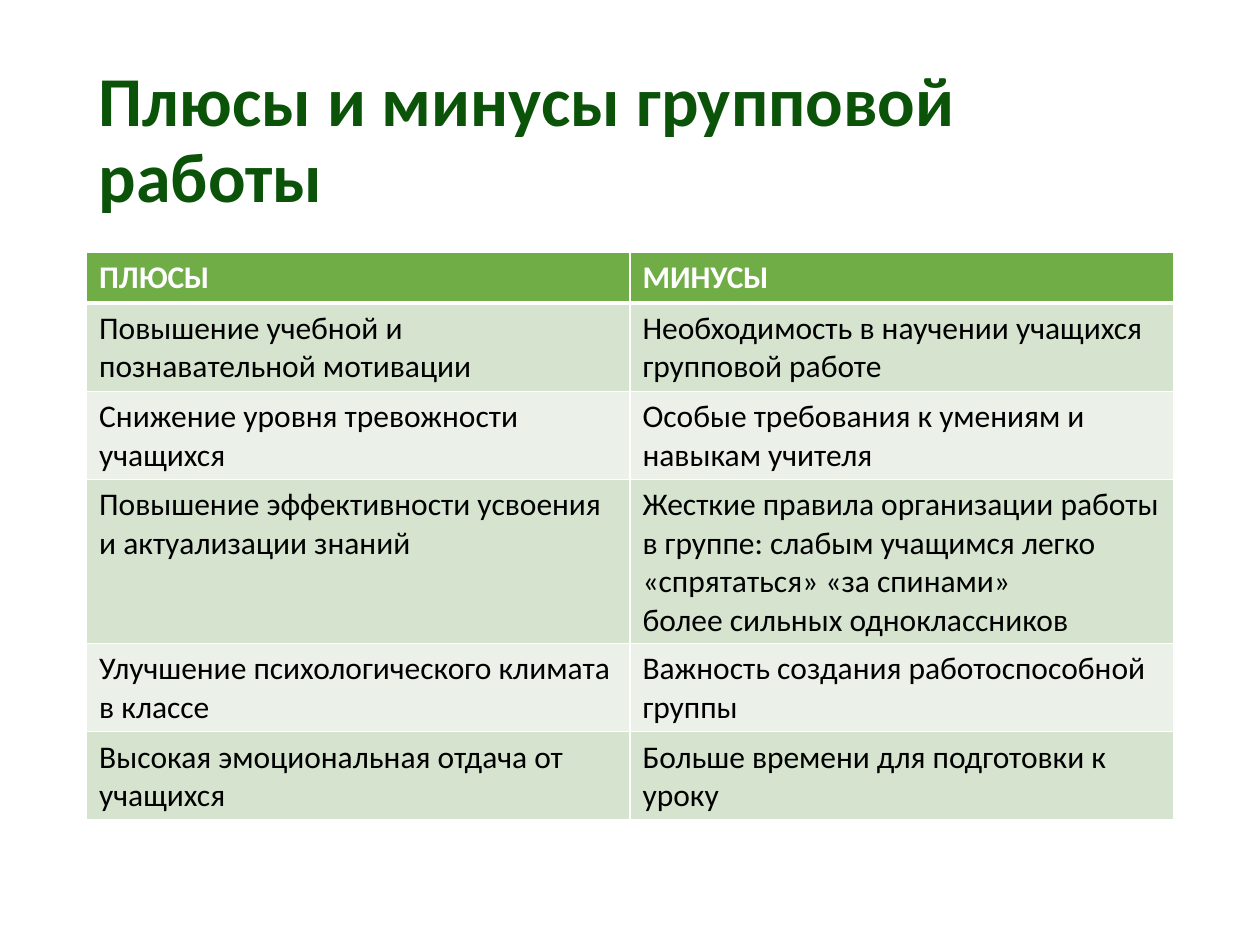
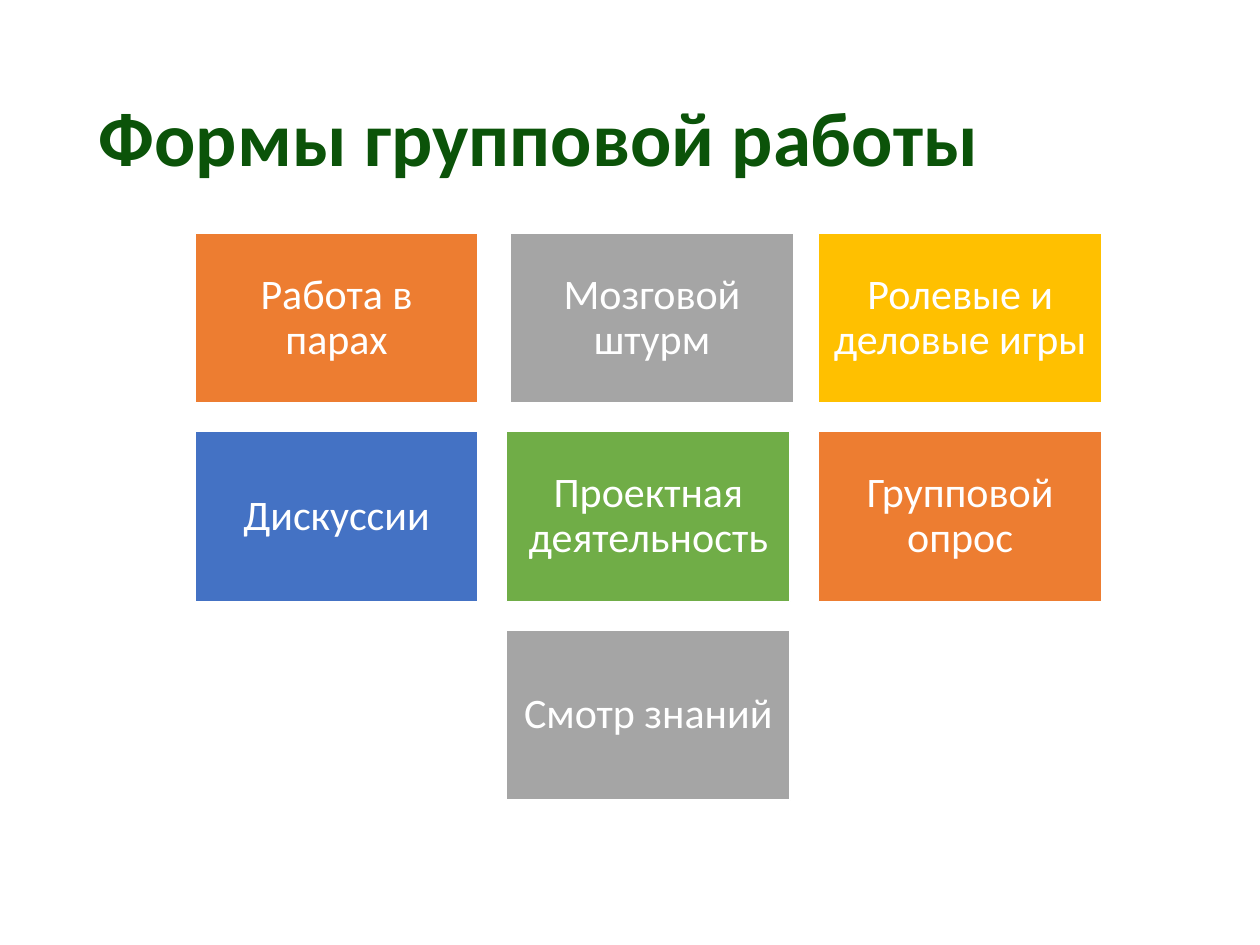
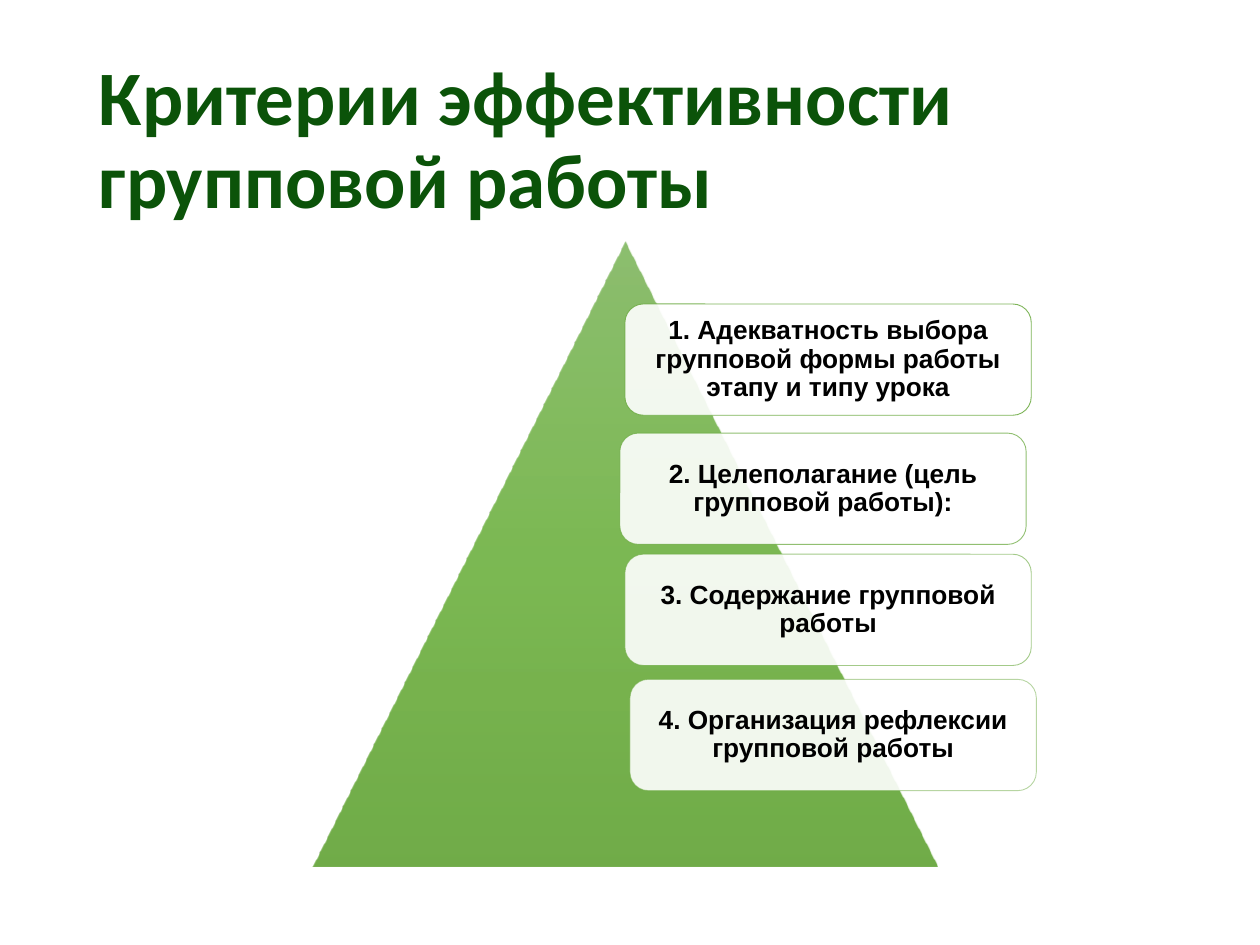
from lxml.etree import SubElement
from pptx import Presentation
from pptx.dml.color import RGBColor
from pptx.enum.shapes import MSO_SHAPE as Shape
from pptx.enum.text import MSO_ANCHOR as Anchor, PP_ALIGN as Align
from pptx.oxml import parse_xml
from pptx.oxml.ns import nsdecls, qn
from pptx.util import Pt

# Shared colours and fonts
TITLE_GREEN = "0B5309"
WHITE, BLACK = "FFFFFF", "000000"
ORANGE, GRAY, YELLOW = "ED7D31", "A5A5A5", "FFC000"
BLUE, GREEN = "4472C4", "70AD47"
BAND_DARK, BAND_LIGHT = "D5E3CF", "EBF1E9"
BODY_FONT, CARD_FONT = "Calibri", "Arial"

# Shared boxes: left, top, width, height
TITLE_BOX = (49.5, 28.8, 621, 104.4)
TABLE_BOX = (49.5, 144, 621, 175.2)
TILES_BOX = (111.3, 133.2, 518.4, 324)
PYRAMID_BOX = (178.5, 138, 357.2, 357.2)

TABLE_ROWS = [
    ("ПЛЮСЫ", "МИНУСЫ"),
    ("Повышение учебной и познавательной мотивации",
     "Необходимость в научении учащихся групповой работе"),
    ("Снижение уровня тревожности учащихся",
     "Особые требования к умениям и навыкам учителя"),
    ("Повышение эффективности усвоения и актуализации знаний",
     "Жесткие правила организации работы в группе: слабым учащимся легко "
     "«спрятаться» «за спинами»\nболее сильных одноклассников"),
    ("Улучшение психологического климата в классе",
     "Важность создания работоспособной группы"),
    ("Высокая эмоциональная отдача от учащихся",
     "Больше времени для подготовки к уроку"),
]

# Text, colour, column, row, shift to the right
TILES = [
    ("Работа в парах", ORANGE, 0, 0, 0),
    ("Мозговой штурм", GRAY, 1, 0, 2.1),
    ("Ролевые и деловые игры", YELLOW, 2, 0, 0),
    ("Дискуссии", BLUE, 0, 1, 0),
    ("Проектная деятельность", GREEN, 1, 1, 0),
    ("Групповой опрос", ORANGE, 2, 1, 0),
    ("Смотр знаний", GRAY, 1, 2, 0),
]

# Text, offset from the pyramid's left and top, opacity of the outline
CRITERIA = [
    ("1. Адекватность выбора групповой формы работы этапу и типу урока",
     178.6, 35.7, 90),
    ("2. Целеполагание (цель групповой работы):", 175.7, 109.5, 77),
    ("3. Содержание групповой работы", 178.6, 178.7, 63),
    ("4. Организация рефлексии групповой работы", 181.5, 250.2, 50),
]


def color(value):
    return RGBColor.from_string(value)


def points(*lengths):
    return [Pt(length) for length in lengths]


def style_text(frame, size, font_color, name=BODY_FONT, bold=False,
               align=Align.LEFT, line_spacing=None):
    for paragraph in frame.paragraphs:
        paragraph.alignment = align
        paragraph.line_spacing = line_spacing
        font = paragraph.font
        font.size, font.name, font.bold = Pt(size), name, bold
        font.color.rgb = color(font_color)


def set_opacity(fill, percent):
    """Make a solid fill partly transparent."""
    parent = fill._xPr.find(qn("a:solidFill"))
    SubElement(parent[0], qn("a:alpha"), val=str(percent * 1000))


def add_block(slide, kind, box, fill_color, line_color, line_width):
    shape = slide.shapes.add_shape(kind, *points(*box))
    shape.shadow.inherit = False
    shape.fill.solid()
    shape.fill.fore_color.rgb = color(fill_color)
    shape.line.color.rgb = color(line_color)
    shape.line.width = Pt(line_width)
    return shape


def write_centered(shape, text, inset, size, font_color, **style):
    frame = shape.text_frame
    frame.word_wrap = True
    frame.vertical_anchor = Anchor.MIDDLE
    frame.margin_left = frame.margin_right = Pt(inset)
    frame.margin_top = frame.margin_bottom = Pt(inset)
    frame.text = text
    style_text(frame, size, font_color, align=Align.CENTER,
               line_spacing=0.9, **style)


def add_title(slide, text, size):
    frame = slide.shapes.add_textbox(*points(*TITLE_BOX)).text_frame
    frame.word_wrap = True
    frame.vertical_anchor = Anchor.MIDDLE
    frame.text = text
    style_text(frame, size, TITLE_GREEN, bold=True, line_spacing=0.9)


def set_borders(cell, top, bottom):
    """Draw white cell borders; they must stand before the cell fill."""
    properties = cell._tc.get_or_add_tcPr()
    sides = [("lnL", 1), ("lnR", 1), ("lnT", top), ("lnB", bottom)]
    for position, (side, width) in enumerate(sides):
        properties.insert(position, parse_xml(
            f'<a:{side} {nsdecls("a")} w="{Pt(width)}"><a:solidFill>'
            f'<a:srgbClr val="{WHITE}"/></a:solidFill></a:{side}>'))


def add_comparison_table(slide, box, rows):
    table = slide.shapes.add_table(
        len(rows), len(rows[0]), *points(*box)).table
    for row_index, texts in enumerate(rows):
        header = row_index == 0
        band = BAND_DARK if row_index % 2 else BAND_LIGHT
        for column_index, text in enumerate(texts):
            cell = table.cell(row_index, column_index)
            cell.text = text
            cell.fill.solid()
            cell.fill.fore_color.rgb = color(GREEN if header else band)
            set_borders(cell, top=3 if row_index == 1 else 1,
                        bottom=3 if header else 1)
            style_text(cell.text_frame, 18, WHITE if header else BLACK,
                       bold=header)


def add_tiles(slide, box, tiles, columns=3, rows=3, gap=16.2):
    left, top, width, height = box
    tile_width = (width - gap * (columns - 1)) / columns
    tile_height = (height - gap * (rows - 1)) / rows
    for text, fill_color, column, row, shift in tiles:
        tile_box = (left + column * (tile_width + gap) + shift,
                    top + row * (tile_height + gap), tile_width, tile_height)
        tile = add_block(slide, Shape.RECTANGLE, tile_box,
                         fill_color, WHITE, 1)
        write_centered(tile, text, 7.2, 24, WHITE)


def add_pyramid(slide, box, criteria):
    left, top, width, height = box
    # Triangle with a vertical gradient
    triangle = slide.shapes.add_shape(
        Shape.ISOSCELES_TRIANGLE, *points(*box))
    triangle.shadow.inherit = False
    triangle.line.fill.background()
    stops = "".join(
        f'<a:gs pos="{position * 1000}"><a:srgbClr val="{value}">'
        '<a:alpha val="90000"/></a:srgbClr></a:gs>'
        for position, value in [(0, "81B861"), (50, "6FB242"),
                                (100, "62A336")])
    triangle._element.spPr.find(qn("a:prstGeom")).addnext(parse_xml(
        f'<a:gradFill {nsdecls("a")}><a:gsLst>{stops}</a:gsLst>'
        '<a:lin ang="5400000" scaled="0"/></a:gradFill>'))
    # Criteria cards
    card_width, card_height = width * 0.65, height * 0.178
    for text, offset_x, offset_y, opacity in criteria:
        card_box = (left + offset_x, top + offset_y, card_width, card_height)
        card = add_block(slide, Shape.ROUNDED_RECTANGLE, card_box,
                         WHITE, GREEN, 0.5)
        set_opacity(card.fill, 90)
        set_opacity(card.line.fill, opacity)
        write_centered(card, text, 4.5, 15, BLACK, name=CARD_FONT, bold=True)


def main():
    presentation = Presentation()
    presentation.slide_width, presentation.slide_height = Pt(720), Pt(540)
    blank = presentation.slide_layouts[6]
    pages = [
        ("Плюсы и минусы групповой работы", 40,
         add_comparison_table, TABLE_BOX, TABLE_ROWS),
        ("Формы групповой работы", 44, add_tiles, TILES_BOX, TILES),
        ("Критерии эффективности групповой работы", 44,
         add_pyramid, PYRAMID_BOX, CRITERIA),
    ]
    for title, title_size, add_content, box, content in pages:
        slide = presentation.slides.add_slide(blank)
        add_title(slide, title, title_size)
        add_content(slide, box, content)
    presentation.save("out.pptx")


if __name__ == "__main__":
    main()
